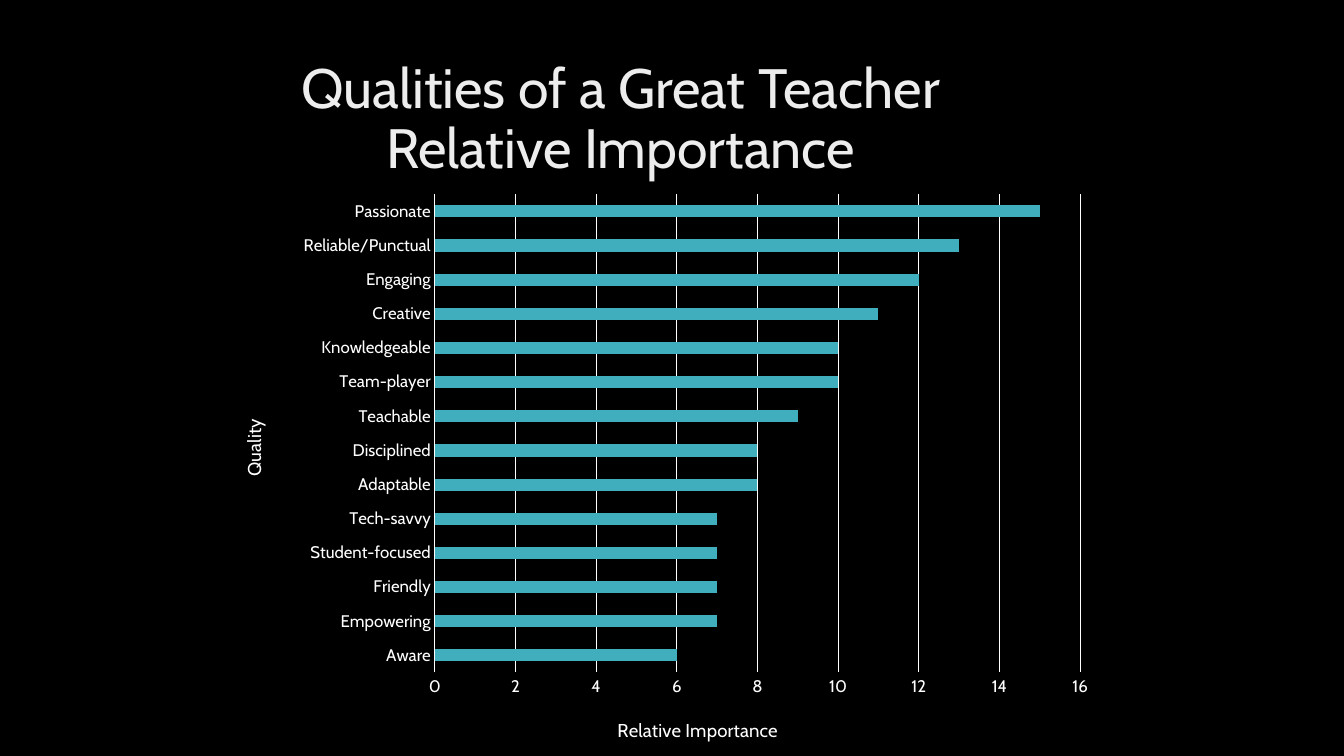
from pptx import Presentation, util as u
from pptx.chart.data import CategoryChartData
from pptx.dml.color import RGBColor
from pptx.enum import chart as ch, text
from pptx.oxml import parse_xml
from pptx.oxml.ns import nsdecls, qn

THEME = {
    "font": "Cabin",
    "background": RGBColor.from_string("000000"),
    "heading": RGBColor.from_string("EDEDED"),
    "light": RGBColor.from_string("FFFFFF"),
    "bar": RGBColor.from_string("41AEBD"),
    "heading_size": u.Pt(39.6),
    "axis_title_size": u.Pt(13.3),
    "label_size": u.Pt(12),
    "rule": u.Pt(0.75),
}


def style_font(font, size, color):
    for name, value in {"name": THEME["font"], "size": size, "bold": False}.items():
        setattr(font, name, value)
    font.color.rgb = color


def place(parent, index, **fractions):
    """Give a chart part a manual layout, in fractions of the chart."""
    for old in parent.findall(qn("c:layout")):
        parent.remove(old)
    target = '<c:layoutTarget val="inner"/>' if "w" in fractions else ""
    modes = "".join(f'<c:{key}Mode val="edge"/>' for key in "xy")
    values = "".join(f'<c:{key} val="{value}"/>' for key, value in fractions.items())
    parent.insert(index, parse_xml(
        f'<c:layout {nsdecls("c")}><c:manualLayout>{target}{modes}{values}'
        "</c:manualLayout></c:layout>"))


prs = Presentation()
prs.slide_width, prs.slide_height = u.Inches(13.33), u.Inches(7.5)
slide = prs.slides.add_slide(prs.slide_layouts[6])
slide.background.fill.solid()
slide.background.fill.fore_color.rgb = THEME["background"]

# Heading
heading = slide.shapes.add_textbox(
    u.Inches(0.96), u.Inches(0.55), u.Inches(10.39), u.Inches(2.08)).text_frame
heading.word_wrap = True
heading.vertical_anchor = text.MSO_ANCHOR.TOP
heading.text = "Qualities of a Great Teacher\vRelative Importance"
heading_lines = heading.paragraphs[0]
heading_lines.alignment = text.PP_ALIGN.CENTER
heading_lines.line_spacing = 0.9
for run in heading_lines.runs:
    style_font(run.font, THEME["heading_size"], THEME["heading"])

# Importance of each quality, lowest bar first
importance = {
    "Aware": 6, "Empowering": 7, "Friendly": 7, "Student-focused": 7,
    "Tech-savvy": 7, "Adaptable": 8, "Disciplined": 8, "Teachable": 9,
    "Team-player": 10, "Knowledgeable": 10, "Creative": 11, "Engaging": 12,
    "Reliable/Punctual": 13, "Passionate": 15,
}
ratings = CategoryChartData()
ratings.categories = list(importance)
ratings.add_series("Series 1", list(importance.values()))
ranking = slide.shapes.add_chart(
    ch.XL_CHART_TYPE.BAR_CLUSTERED, u.Inches(2.09), u.Inches(1.81),
    u.Inches(8.89), u.Inches(5.93), ratings).chart
ranking.has_title = False
ranking.has_legend = False
style_font(ranking.font, THEME["label_size"], THEME["light"])

# Bars
bars = ranking.plots[0]
bars.gap_width = 182
bars.vary_by_categories = False
bar_fill = bars.series[0].format.fill
bar_fill.solid()
bar_fill.fore_color.rgb = THEME["bar"]
place(ranking._chartSpace.chart.plotArea, 0, x=0.25, y=0.02, w=0.72, h=0.8)

# Axes with their titles
qualities, scale = ranking.category_axis, ranking.value_axis
for axis, label, x, y in (
    (qualities, "Quality", 0.03, 0.39),
    (scale, "Relative Importance", 0.45, 0.89),
):
    axis.major_tick_mark = axis.minor_tick_mark = ch.XL_TICK_MARK.NONE
    style_font(axis.tick_labels.font, THEME["label_size"], THEME["light"])
    caption = axis.axis_title.text_frame
    caption.text = label
    style_font(caption.paragraphs[0].runs[0].font,
               THEME["axis_title_size"], THEME["light"])
    place(axis.axis_title._element, 1, x=x, y=y)

for name, value in {"minimum_scale": 0, "maximum_scale": 16, "major_unit": 2,
                    "has_major_gridlines": True}.items():
    setattr(scale, name, value)
scale.format.line.fill.background()
for line in (qualities.format.line, scale.major_gridlines.format.line):
    line.color.rgb = THEME["light"]
    line.width = THEME["rule"]

prs.save("out.pptx")
